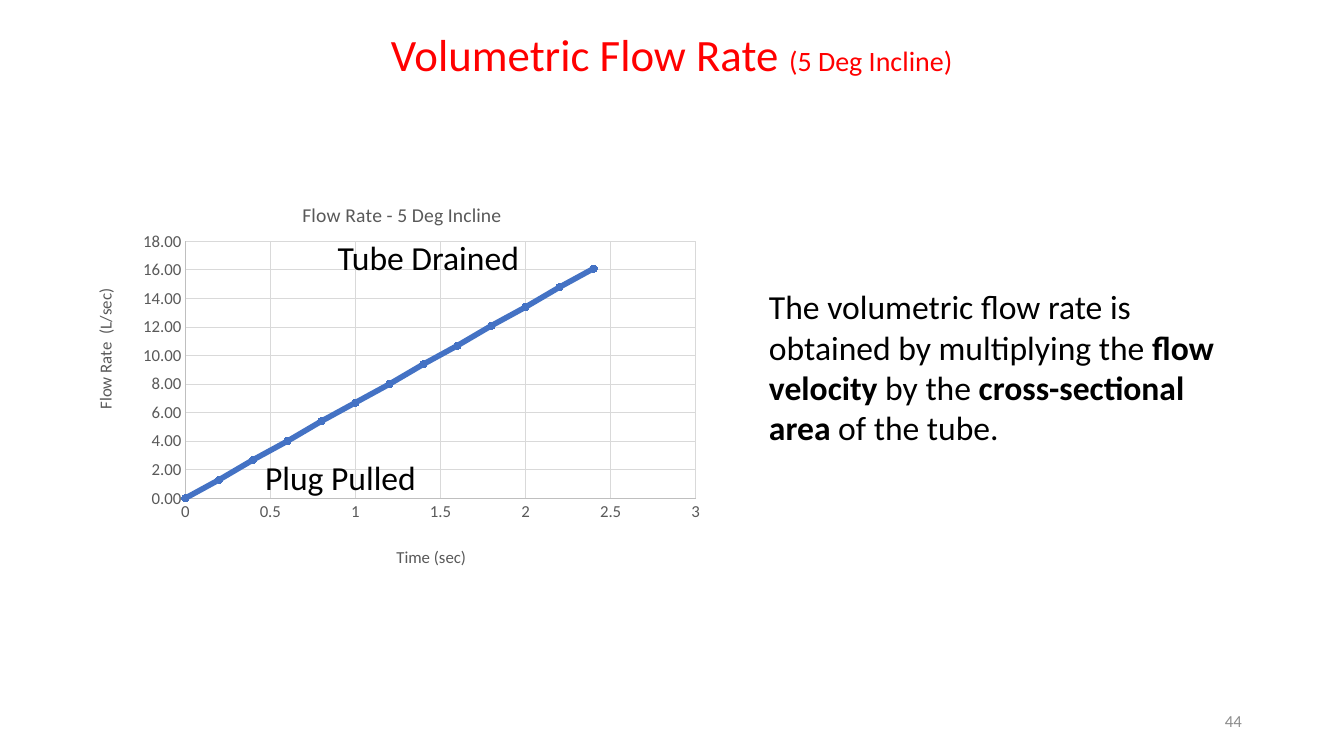
import pptx
import pptx.util
import pptx.chart.data
import pptx.dml.color
import pptx.enum.chart
import pptx.enum.text
import pptx.oxml.ns
import pptx.oxml.xmlchemy

Cm = pptx.util.Cm
Pt = pptx.util.Pt
Color = pptx.dml.color.RGBColor
Align = pptx.enum.text.PP_ALIGN
Node = pptx.oxml.xmlchemy.OxmlElement
qn = pptx.oxml.ns.qn

FONT = "Calibri"
BLACK = Color(0x00, 0x00, 0x00)
RED = Color(0xFF, 0x00, 0x00)
BLUE = Color(0x44, 0x72, 0xC4)
DARK = Color(0x59, 0x59, 0x59)
GRAY = Color(0x8C, 0x8C, 0x8C)
AXIS = Color(0xBF, 0xBF, 0xBF)
GRID = Color(0xD9, 0xD9, 0xD9)


def add_text(box, runs, color, align=Align.LEFT):
    """Add a text box; each run is (text, size, bold)."""
    frame = slide.shapes.add_textbox(*[Cm(v) for v in box]).text_frame
    frame.word_wrap = True
    para = frame.paragraphs[0]
    para.alignment = align
    for text, size, bold in runs:
        run = para.add_run()
        run.text = text
        run.font.name = FONT
        run.font.size = Pt(size)
        run.font.bold = bold
        run.font.color.rgb = color
    return frame


def place(part, index, **values):
    """Fix a chart part at fractions of the chart area."""
    layout = part.find(qn("c:layout"))
    if layout is not None:
        part.remove(layout)
    layout = Node("c:layout")
    part.insert(index, layout)
    manual = Node("c:manualLayout")
    layout.append(manual)
    modes = {"xMode": "edge", "yMode": "edge"}
    if "w" in values:
        modes = {"layoutTarget": "inner", **modes}
    for name, value in {**modes, **values}.items():
        item = Node("c:" + name)
        item.set("val", str(value))
        manual.append(item)


deck = pptx.Presentation()
deck.slide_width, deck.slide_height = Cm(33.87), Cm(19.05)
slide = deck.slides.add_slide(deck.slide_layouts[6])

# Heading and explanation
add_text((3.91, 0.56, 26.04, 1.62),
         [("Volumetric Flow Rate ", 32, False), ("(5 Deg Incline)", 20, False)],
         RED, Align.CENTER)
add_text((19.13, 7.09, 12.6, 4.37),
         [("The volumetric flow rate is obtained by multiplying the ", 24, False),
          ("flow velocity ", 24, True),
          ("by the ", 24, False),
          ("cross-sectional area ", 24, True),
          ("of the tube.", 24, False)], BLACK)

# Flow rate chart
flows = [0, 1.3, 2.7, 4, 5.4, 6.7, 8, 9.4, 10.7, 12.1, 13.4, 14.8, 16.1]
data = pptx.chart.data.XyChartData()
points = data.add_series("Series 1")
for step, flow in enumerate(flows):
    points.add_data_point(round(step * 0.2, 1), flow)
chart = slide.shapes.add_chart(
    pptx.enum.chart.XL_CHART_TYPE.XY_SCATTER_LINES,
    Cm(2.13), Cm(4.47), Cm(15.88), Cm(10.11), data).chart
chart.has_legend = False
chart.font.name = FONT
chart.font.size = Pt(12)
chart.font.color.rgb = DARK
plot = chart.plots[0]
plot.vary_by_categories = False
place(chart._chartSpace.chart.plotArea, 0, x=0.16, y=0.16, w=0.81, h=0.64)

# Line and markers
line = plot.series[0]
line.smooth = False
line.format.line.color.rgb = BLUE
line.format.line.width = Pt(4)
line.marker.style = pptx.enum.chart.XL_MARKER_STYLE.CIRCLE
line.marker.size = 5
line.marker.format.fill.solid()
line.marker.format.fill.fore_color.rgb = BLUE
line.marker.format.line.color.rgb = BLUE

# Axes
for axis, top, unit, form in ((chart.category_axis, 3, 0.5, "General"),
                              (chart.value_axis, 18, 2, "0.00")):
    axis.minimum_scale, axis.maximum_scale, axis.major_unit = 0, top, unit
    axis.major_tick_mark = pptx.enum.chart.XL_TICK_MARK.NONE
    axis.minor_tick_mark = pptx.enum.chart.XL_TICK_MARK.NONE
    axis.tick_labels.number_format = form
    axis.tick_labels.number_format_is_linked = False
    axis.tick_labels.font.name = FONT
    axis.tick_labels.font.size = Pt(12)
    axis.tick_labels.font.color.rgb = DARK
    axis.has_major_gridlines = True
    for rule, color in ((axis.format.line, AXIS),
                        (axis.major_gridlines.format.line, GRID)):
        rule.color.rgb = color
        rule.width = Pt(0.75)

# Chart and axis titles
chart.has_title = True
for title, text, size, left, top in (
        (chart.chart_title, "Flow Rate - 5 Deg Incline", 14, 0.34, 0.05),
        (chart.category_axis.axis_title, "Time (sec)", 12, 0.49, 0.91),
        (chart.value_axis.axis_title, "Flow Rate  (L/sec)", 12, 0.01, 0.27)):
    title.text_frame.text = text
    font = title.text_frame.paragraphs[0].runs[0].font
    font.name = FONT
    font.size = Pt(size)
    font.bold = False
    font.color.rgb = DARK
    place(title._element, 1, x=left, y=top)
turn = chart.value_axis.axis_title.text_frame._txBody.bodyPr
turn.set("rot", "-5400000")
turn.set("vert", "horz")

# Labels on the chart
add_text((8.26, 5.84, 5.36, 1.24), [("Tube Drained", 24, False)], BLACK)
add_text((6.43, 11.38, 6.86, 1.24), [("Plug Pulled", 24, False)], BLACK)

# Slide number
number = add_text((23.93, 17.65, 7.62, 1.02), [("44", 12, False)], GRAY, Align.RIGHT)
number.vertical_anchor = pptx.enum.text.MSO_ANCHOR.MIDDLE

deck.save("out.pptx")
